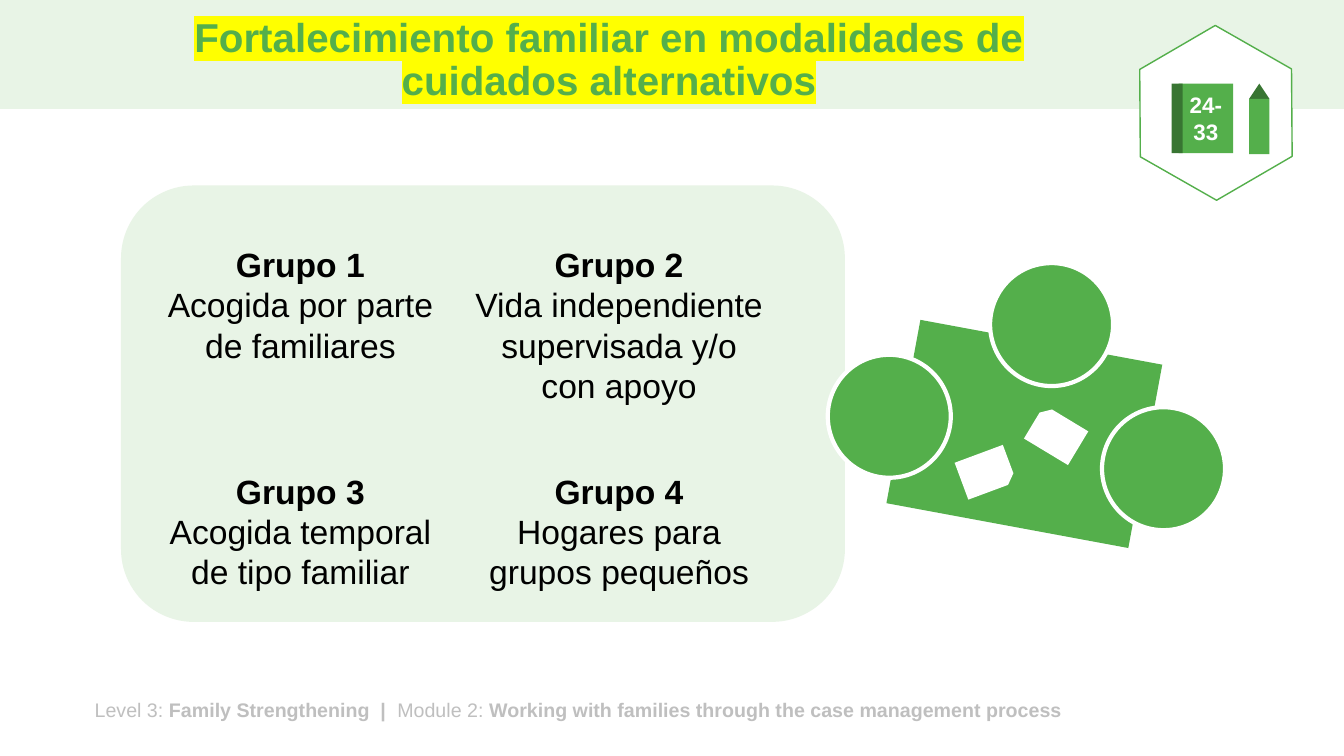
from dataclasses import dataclass
from typing import Optional

from lxml.etree import SubElement
from pptx import Presentation
from pptx.dml.color import RGBColor
from pptx.enum.shapes import MSO_SHAPE as Preset
from pptx.enum.text import MSO_ANCHOR as Anchor, PP_ALIGN as Align
from pptx.oxml.ns import qn
from pptx.util import Inches, Pt

GREEN, DARK_GREEN, PALE_GREEN = "54AF4B", "387532", "E8F4E6"
WHITE, BLACK, GREY, YELLOW = "FFFFFF", "000000", "BFBFBF", "FFFF00"
TABLE_TILT = 10.5


@dataclass
class Box:
    left: float
    top: float
    width: float
    height: float

    def lengths(self) -> list:
        return [Inches(v) for v in (self.left, self.top, self.width, self.height)]


@dataclass
class Figure:
    preset: Preset
    box: Box
    fill: str = GREEN
    line: Optional[str] = None
    line_width: float = 1
    rotation: float = 0
    adjustments: tuple = ()


@dataclass
class Run:
    text: str
    bold: bool = False


@dataclass
class Group:
    title: str
    description: str


def color(value: str) -> RGBColor:
    return RGBColor.from_string(value)


def draw_figure(slide, figure: Figure):
    shape = slide.shapes.add_shape(figure.preset, *figure.box.lengths())
    shape.shadow.inherit = False
    shape.rotation = figure.rotation
    for index, value in enumerate(figure.adjustments):
        shape.adjustments[index] = value
    shape.fill.solid()
    shape.fill.fore_color.rgb = color(figure.fill)
    if figure.line:
        shape.line.color.rgb = color(figure.line)
        shape.line.width = Pt(figure.line_width)
    else:
        shape.line.fill.background()
    return shape


def highlight(run, value: str) -> None:
    mark = run._r.get_or_add_rPr().makeelement(qn("a:highlight"), {})
    SubElement(mark, qn("a:srgbClr"), val=value)
    run._r.rPr.find(qn("a:solidFill")).addnext(mark)


def write_text(shape, paragraphs: list[list[Run]], *, size: float, font_color: str,
               align: Align = Align.CENTER, anchor: Anchor = Anchor.TOP, wrap: bool = True,
               spacing: Optional[float] = None, marker: Optional[str] = None) -> None:
    frame = shape.text_frame
    frame.word_wrap = wrap
    frame.vertical_anchor = anchor
    for index, pieces in enumerate(paragraphs):
        paragraph = frame.add_paragraph() if index else frame.paragraphs[0]
        paragraph.alignment = align
        if spacing:
            paragraph.line_spacing = spacing
        for piece in pieces:
            run = paragraph.add_run()
            run.text = piece.text
            run.font.name = "Arial"
            run.font.size = Pt(size)
            run.font.bold = piece.bold
            run.font.color.rgb = color(font_color)
            if marker:
                highlight(run, marker)


def add_text(slide, box: Box, paragraphs: list[list[Run]], **text_format) -> None:
    write_text(slide.shapes.add_textbox(*box.lengths()), paragraphs, **text_format)


def draw_frame(slide) -> None:
    draw_figure(slide, Figure(Preset.RECTANGLE, Box(0, 0, 13.33, 1.08), PALE_GREEN))
    footer = [
        Run("Level 3: "),
        Run("Family Strengthening  |  ", True),
        Run("Module 2: "),
        Run("Working with families through the case management process", True),
    ]
    add_text(slide, Box(0.84, 6.87, 10.62, 0.34), [footer],
             size=14, font_color=GREY, align=Align.LEFT)
    title = Run("Fortalecimiento familiar en modalidades de cuidados alternativos", True)
    add_text(slide, Box(0.92, 0.13, 10.24, 0.95), [[title]], size=28.8, font_color=GREEN,
             anchor=Anchor.MIDDLE, spacing=0.9, marker=YELLOW)


def draw_groups(slide) -> None:
    draw_figure(slide, Figure(Preset.ROUNDED_RECTANGLE, Box(1.2, 1.84, 7.18, 4.33), PALE_GREEN))
    groups = [
        Group("Grupo 1", "Acogida por parte de familiares"),
        Group("Grupo 2", "Vida independiente supervisada y/o con apoyo"),
        Group("Grupo 3", "Acogida temporal de tipo familiar"),
        Group("Grupo 4", "Hogares para grupos pequeños"),
    ]
    for index, group in enumerate(groups):
        row, column = divmod(index, 2)
        box = Box(1.4 + 3.16 * column, 2.37 + 2.25 * row, 3.16, 1.55)
        add_text(slide, box, [[Run(group.title, True)], [Run(group.description)]],
                 size=24, font_color=BLACK)


def draw_page_badge(slide) -> None:
    draw_figure(slide, Figure(Preset.HEXAGON, Box(11.19, 0.37, 1.74, 1.5), WHITE, GREEN,
                              rotation=29.7, adjustments=(0.29, 1.155)))
    book = draw_figure(slide, Figure(Preset.RECTANGLE, Box(11.69, 0.83, 0.54, 0.69)))
    write_text(book, [[Run("24-", True)], [Run("33", True)]], size=16, font_color=WHITE,
               anchor=Anchor.MIDDLE, wrap=False)
    spine_and_pencil = [
        Figure(Preset.RECTANGLE, Box(11.62, 0.83, 0.11, 0.69), DARK_GREEN),
        Figure(Preset.ISOSCELES_TRIANGLE, Box(12.39, 0.83, 0.2, 0.15), DARK_GREEN),
        Figure(Preset.RECTANGLE, Box(12.39, 0.98, 0.2, 0.55)),
    ]
    for figure in spine_and_pencil:
        draw_figure(slide, figure)


def draw_meeting(slide) -> None:
    draw_figure(slide, Figure(Preset.RECTANGLE, Box(8.94, 3.38, 2.44, 1.85),
                              rotation=TABLE_TILT))
    # People around the table
    for left, top in [(8.21, 3.52), (9.82, 2.61), (10.93, 4.04)]:
        draw_figure(slide, Figure(Preset.OVAL, Box(left, top, 1.22, 1.22), GREEN, WHITE, 3,
                                  TABLE_TILT))
    # Sheets of paper
    for left, top, rotation in [(9.58, 4.43, 69.6), (10.28, 4.06, 301.1)]:
        draw_figure(slide, Figure(Preset.SNIP_1_RECTANGLE, Box(left, top, 0.39, 0.51), WHITE,
                                  rotation=rotation, adjustments=(0.23,)))


def main() -> None:
    presentation = Presentation()
    presentation.slide_width = Inches(13.33)
    presentation.slide_height = Inches(7.5)
    slide = presentation.slides.add_slide(presentation.slide_layouts[6])
    draw_frame(slide)
    draw_groups(slide)
    draw_page_badge(slide)
    draw_meeting(slide)
    presentation.save("out.pptx")


if __name__ == "__main__":
    main()
